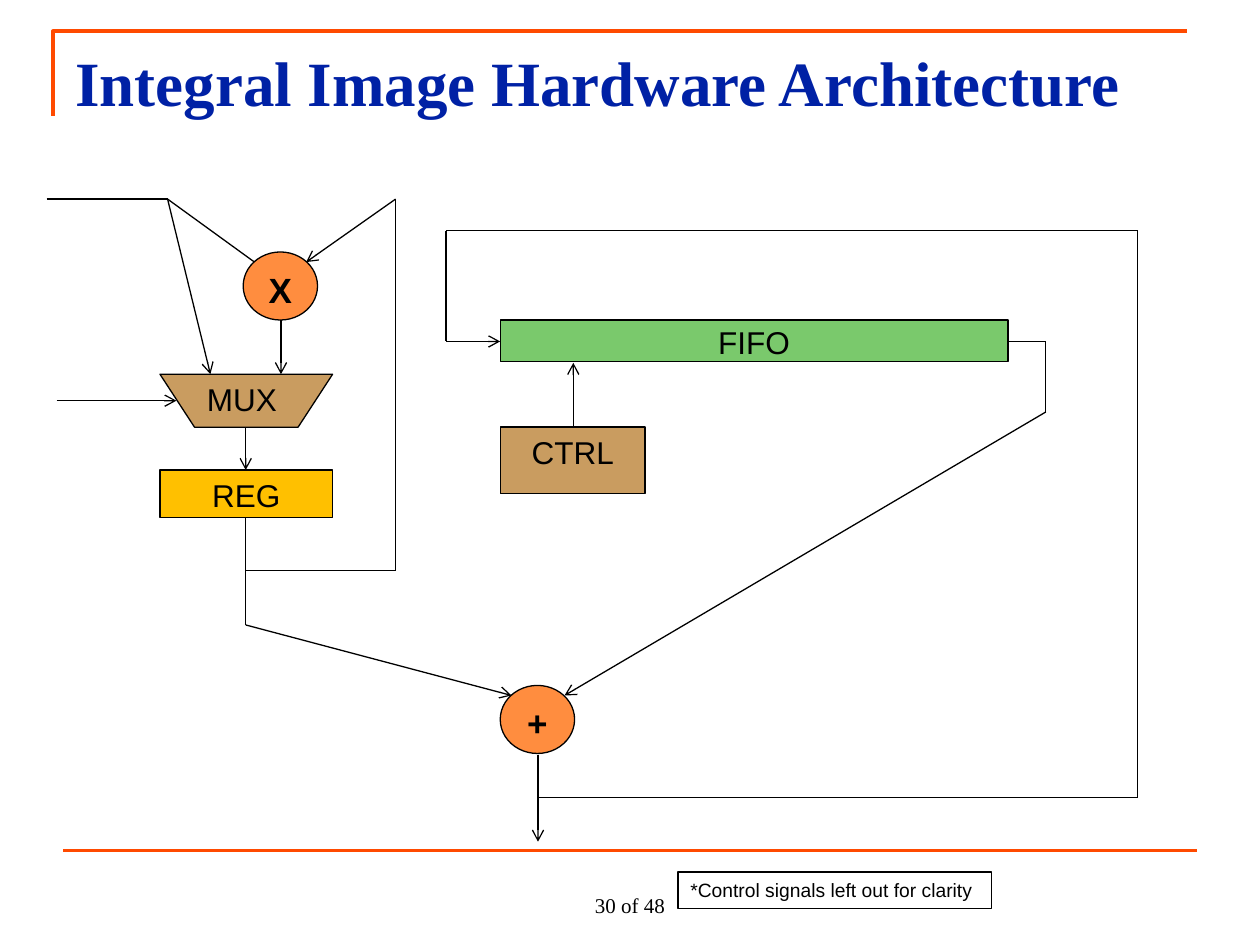
from itertools import pairwise

from pptx import Presentation
from pptx.dml.color import RGBColor
from pptx.enum.shapes import MSO_CONNECTOR, MSO_SHAPE
from pptx.enum.text import MSO_ANCHOR, PP_ALIGN
from pptx.oxml.ns import qn
from pptx.util import Inches, Pt

COLORS = {
    "rule": "FF4A00", "title": "0021A5", "ink": "000000",
    "operator": "FF8D3F", "control": "C99C60", "register": "FFC000", "fifo": "7AC96C",
}
SERIF, SANS = "Times New Roman", "Arial"
LEFT, CENTER = PP_ALIGN.LEFT, PP_ALIGN.CENTER
INSET, TIGHT_INSET = 0.05, 0.02

TITLE = ("Integral Image Hardware Architecture", (0.5, 0.3, 9, 1.03))
PAGE_NUMBER = ("30 of 48", (4, 6.83, 2, 0.5))

BLOCKS = [
    ("X", MSO_SHAPE.OVAL, (1.93, 2, 0.59, 0.54), "operator", 20, True, CENTER, INSET),
    ("MUX", MSO_SHAPE.FLOWCHART_MANUAL_OPERATION, (1.27, 2.97, 1.37, 0.42),
     "control", 18, False, LEFT, INSET),
    ("REG", MSO_SHAPE.RECTANGLE, (1.27, 3.73, 1.37, 0.38), "register", 18, False, CENTER, INSET),
    ("+", MSO_SHAPE.OVAL, (3.97, 5.44, 0.59, 0.54), "operator", 20, True, CENTER, INSET),
    ("FIFO", MSO_SHAPE.RECTANGLE, (3.97, 2.54, 4.03, 0.33), "fifo", 18, False, CENTER, TIGHT_INSET),
    ("CTRL", MSO_SHAPE.RECTANGLE, (3.97, 3.39, 1.15, 0.53), "control", 18, False, CENTER, INSET),
    ("*Control signals left out for clarity", MSO_SHAPE.RECTANGLE,
     (5.38, 6.92, 2.49, 0.29), None, 11, False, LEFT, INSET),
]

PLAIN_WIRES = [
    [(0.37, 1.58), (1.33, 1.58), (2.02, 2.08)],
    [(1.95, 4.53), (3.14, 4.53)],
    [(4.27, 6.33), (9.03, 6.33)],
]
ARROW_WIRES = [
    [(1.33, 1.58), (1.67, 2.97)],
    [(0.45, 3.18), (1.4, 3.18)],
    [(2.23, 2.54), (2.23, 2.97)],
    [(1.95, 3.39), (1.95, 3.73)],
    [(1.95, 4.11), (1.95, 4.96), (4.06, 5.52)],
    [(3.14, 4.53), (3.14, 1.58), (2.43, 2.08)],
    [(8, 2.71), (8.3, 2.71), (8.3, 3.27), (4.48, 5.52)],
    [(4.27, 5.99), (4.27, 6.68)],
    [(9.03, 6.33), (9.03, 1.83), (3.54, 1.83), (3.54, 2.71), (3.97, 2.71)],
    [(4.55, 3.39), (4.55, 2.88)],
]


def color(name):
    return RGBColor.from_string(COLORS[name])


def write(shape, text, font, size, ink="ink", bold=False, align=LEFT,
          anchor=MSO_ANCHOR.TOP, inset=INSET):
    frame = shape.text_frame
    frame.text = text
    frame.word_wrap = True
    frame.vertical_anchor = anchor
    frame.margin_top = frame.margin_bottom = Inches(inset)
    paragraph = frame.paragraphs[0]
    paragraph.alignment = align
    span = paragraph.runs[0]
    span.font.name = font
    span.font.size = Pt(size)
    span.font.bold = bold
    span.font.color.rgb = color(ink)


def outline(shape, name="ink", width=0.75):
    shape.line.color.rgb = color(name)
    shape.line.width = Pt(width)


def add_line(page, start, end, name="ink", width=0.75, arrow=False):
    line = page.shapes.add_connector(MSO_CONNECTOR.STRAIGHT, *map(Inches, start + end))
    outline(line, name, width)
    properties = line._element.spPr
    properties.append(properties.makeelement(qn("a:effectLst"), {}))
    if arrow:
        stroke = line.line._get_or_add_ln()
        stroke.append(stroke.makeelement(qn("a:tailEnd"), {"type": "arrow"}))


def add_wire(page, points, arrow):
    segments = list(pairwise(points))
    for number, (start, end) in enumerate(segments, 1):
        add_line(page, start, end, arrow=arrow and number == len(segments))


def add_block(page, text, kind, place, fill, size, bold, align, inset):
    block = page.shapes.add_shape(kind, *map(Inches, place))
    block.shadow.inherit = False
    outline(block)
    if fill:
        block.fill.solid()
        block.fill.fore_color.rgb = color(fill)
    else:
        block.fill.background()
    write(block, text, SANS, size, bold=bold, align=align, inset=inset)


def add_frame(page):
    builder = page.shapes.build_freeform(Inches(0.42), Inches(0.92))
    corners = [(0.42, 0.25), (9.42, 0.25)]
    builder.add_line_segments([(Inches(x), Inches(y)) for x, y in corners], close=False)
    bracket = builder.convert_to_shape()
    bracket.shadow.inherit = False
    bracket.fill.background()
    outline(bracket, "rule", 2.25)
    add_line(page, (0.5, 6.75), (9.5, 6.75), "rule", 2.25)


def main():
    deck = Presentation()
    deck.slide_width, deck.slide_height = Inches(10), Inches(7.5)
    page = deck.slides.add_slide(deck.slide_layouts[6])
    add_frame(page)

    text, place = TITLE
    box = page.shapes.add_textbox(*map(Inches, place))
    write(box, text, SERIF, 36, "title", bold=True)
    text, place = PAGE_NUMBER
    box = page.shapes.add_textbox(*map(Inches, place))
    write(box, text, SERIF, 12, align=CENTER, anchor=MSO_ANCHOR.BOTTOM)

    for block in BLOCKS:
        add_block(page, *block)
    for points in PLAIN_WIRES:
        add_wire(page, points, arrow=False)
    for points in ARROW_WIRES:
        add_wire(page, points, arrow=True)
    deck.save("out.pptx")


if __name__ == "__main__":
    main()
